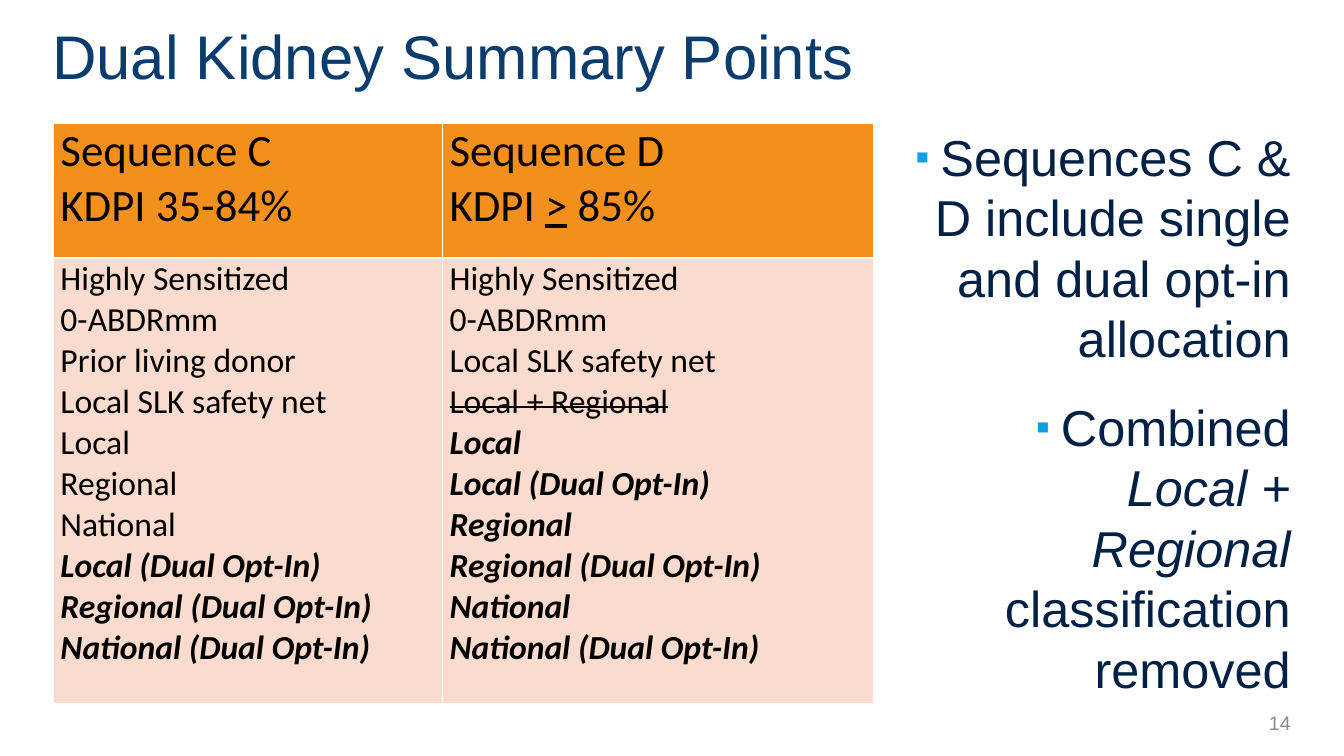
from lxml import etree
from pptx import Presentation
from pptx.dml.color import RGBColor
from pptx.enum.text import MSO_ANCHOR, PP_ALIGN
from pptx.oxml.ns import qn
from pptx.util import Inches, Pt

LEFT, RIGHT = PP_ALIGN.LEFT, PP_ALIGN.RIGHT
TOP, MIDDLE = MSO_ANCHOR.TOP, MSO_ANCHOR.MIDDLE

# Content: a paragraph is a list of (text, style) runs;
# style letters: b bold, i italic, u underline, s strike
TITLE = [[("Dual Kidney Summary Points", "")]]
PAGE = [[("14", "")]]
POINTS = [
    [("Sequences C & D include single and dual opt-in allocation", "")],
    [("Combined ", ""), ("Local + Regional", "i"), (" classification removed", "")],
]
HEADERS = [
    [[("Sequence C", "")], [("KDPI 35-84%", "")]],
    [[("Sequence D", "")], [("KDPI ", ""), (">", "u"), (" 85%", "")]],
]
SEQUENCES = [
    [
        [("Highly Sensitized", "")],
        [("0-ABDRmm", "")],
        [("Prior living donor", "")],
        [("Local SLK safety net", "")],
        [("Local", "")],
        [("Regional", "")],
        [("National", "")],
        [("Local (Dual Opt-In)", "bi")],
        [("Regional (Dual Opt-In)", "bi")],
        [("National (Dual Opt-In)", "bi")],
    ],
    [
        [("Highly Sensitized", "")],
        [("0-ABDRmm", "")],
        [("Local SLK safety net", "")],
        [("Local + Regional", "s")],
        [("Local", "bi")],
        [("Local (Dual Opt-In)", "bi")],
        [("Regional", "bi")],
        [("Regional (Dual Opt-In)", "bi")],
        [("National", "bi")],
        [("National (Dual Opt-In)", "bi")],
    ],
]

# Each text style is (font, size, colour)
THEME = {
    "title": ("Arial", 44, "0A3C6E"),
    "page": ("Arial", 14, "8C8C8C"),
    "point": ("Arial", 36, "002045"),
    "header": ("Calibri", 32, "000000"),
    "body": ("Calibri", 24, "000000"),
    "header_fill": "F3901D",
    "body_fill": "FADBCD",
    "border": "FFFFFF",
    "bullet": "0FA0E4",
}
COL_WIDTHS = (3.86, 4.27)
ROW_HEIGHTS = (1.34, 4.42)


def write(tf, paragraphs, style, align=LEFT):
    font, size, color = THEME[style]
    for i, runs in enumerate(paragraphs):
        p = tf.paragraphs[0] if i == 0 else tf.add_paragraph()
        p.alignment = align
        for text, marks in runs:
            r = p.add_run()
            r.text = text
            r.font.name, r.font.size = font, Pt(size)
            r.font.color.rgb = RGBColor.from_string(color)
            r.font.bold = "b" in marks
            r.font.italic = "i" in marks
            r.font.underline = "u" in marks
            if "s" in marks:
                r.font._element.set("strike", "sngStrike")


def add_text(slide, box, paragraphs, style, align=LEFT, anchor=MIDDLE):
    tf = slide.shapes.add_textbox(*map(Inches, box)).text_frame
    tf.word_wrap = True
    tf.vertical_anchor = anchor
    write(tf, paragraphs, style, align)
    return tf


def add_bullet(p):
    pPr = p._p.get_or_add_pPr()
    pPr.set("marL", str(Inches(0.25)))
    pPr.set("indent", str(Inches(-0.25)))
    color = etree.SubElement(pPr, qn("a:buClr"))
    etree.SubElement(color, qn("a:srgbClr"), val=THEME["bullet"])
    etree.SubElement(pPr, qn("a:buSzPct"), val="80000")
    etree.SubElement(pPr, qn("a:buFont"), typeface="Arial")
    etree.SubElement(pPr, qn("a:buChar"), char="▪")


def add_borders(cell):
    tcPr = cell._tc.get_or_add_tcPr()
    for i, side in enumerate(("lnL", "lnR", "lnT", "lnB")):
        ln = etree.Element(qn(f"a:{side}"), w=str(Pt(1)))
        fill = etree.SubElement(ln, qn("a:solidFill"))
        etree.SubElement(fill, qn("a:srgbClr"), val=THEME["border"])
        tcPr.insert(i, ln)


def main():
    prs = Presentation()
    prs.slide_width, prs.slide_height = Inches(13.33), Inches(7.5)
    slide = prs.slides.add_slide(prs.slide_layouts[6])

    # Title and page number
    add_text(slide, (0.42, 0.08, 12.74, 0.93), TITLE, "title")
    add_text(slide, (10.64, 6.97, 2.26, 0.4), PAGE, "page", RIGHT)

    # Summary points
    tf = add_text(slide, (8.84, 1.2, 4.06, 5.77), POINTS, "point", RIGHT, TOP)
    for i, p in enumerate(tf.paragraphs):
        p.space_before = Pt(20 if i else 0)
        add_bullet(p)

    # Sequence table
    table = slide.shapes.add_table(
        len(ROW_HEIGHTS), len(COL_WIDTHS), Inches(0.53), Inches(1.22),
        Inches(sum(COL_WIDTHS)), Inches(sum(ROW_HEIGHTS))).table
    table.first_row = table.horz_banding = False
    for col, width in zip(table.columns, COL_WIDTHS):
        col.width = Inches(width)
    for row, height in zip(table.rows, ROW_HEIGHTS):
        row.height = Inches(height)
    for r, (style, texts) in enumerate((("header", HEADERS), ("body", SEQUENCES))):
        for c, paragraphs in enumerate(texts):
            cell = table.cell(r, c)
            cell.margin_left = cell.margin_right = Inches(0.07)
            cell.margin_top, cell.margin_bottom = Inches(0.01), 0
            cell.fill.solid()
            cell.fill.fore_color.rgb = RGBColor.from_string(THEME[f"{style}_fill"])
            add_borders(cell)
            write(cell.text_frame, paragraphs, style)

    prs.save("out.pptx")


if __name__ == "__main__":
    main()
